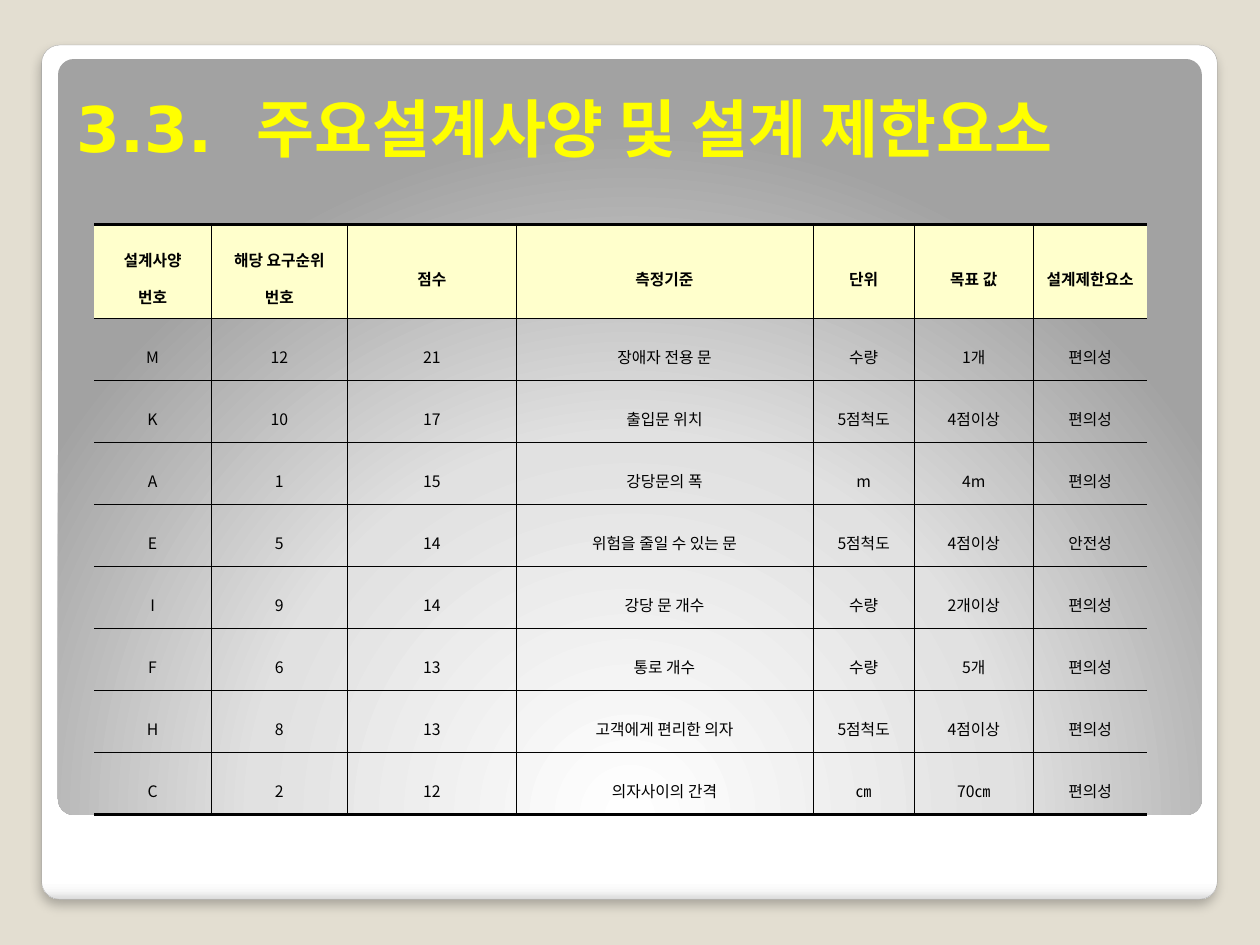
import pptx
import pptx.util
import pptx.oxml
import pptx.oxml.ns
import pptx.dml.color
import pptx.enum.shapes
import pptx.enum.text
from lxml import etree

Cm, Pt = pptx.util.Cm, pptx.util.Pt
RGBColor = pptx.dml.color.RGBColor
qn = pptx.oxml.ns.qn

BACKDROP = RGBColor(0xE3, 0xDE, 0xD1)
CARD_EDGE = RGBColor(0xA4, 0xA4, 0xA4)
YELLOW = RGBColor(0xFF, 0xFF, 0x00)
CREAM = RGBColor(0xFF, 0xFF, 0xCC)
BLACK = RGBColor(0x00, 0x00, 0x00)
WHITE = RGBColor(0xFF, 0xFF, 0xFF)
CARD_STOPS = [(0, WHITE), (98, WHITE), (99, RGBColor(0xF7, 0xF7, 0xF7)), (100, RGBColor(0xDA, 0xDA, 0xDA))]
PANEL_STOPS = [(0, WHITE), (55, RGBColor(0xE1, 0xE1, 0xE1)), (100, RGBColor(0xA2, 0xA2, 0xA2))]
TITLE_FONT = "DejaVu Sans"
TABLE_FONT = "Noto Sans CJK KR"
NO_STYLE = "{2D5ABB26-0587-4C30-8999-92F81FD0307C}"

TITLE_NUMBER, TITLE_WORDS = "3.3.", "주요설계사양 및 설계 제한요소"
HEADER = ["설계사양\n번호", "해당 요구순위 번호", "점수", "측정기준", "단위", "목표 값", "설계제한요소"]
ROWS = [
    ["M", "12", "21", "장애자 전용 문", "수량", "1개", "편의성"],
    ["K", "10", "17", "출입문 위치", "5점척도", "4점이상", "편의성"],
    ["A", "1", "15", "강당문의 폭", "m", "4m", "편의성"],
    ["E", "5", "14", "위험을 줄일 수 있는 문", "5점척도", "4점이상", "안전성"],
    ["I", "9", "14", "강당 문 개수", "수량", "2개이상", "편의성"],
    ["F", "6", "13", "통로 개수", "수량", "5개", "편의성"],
    ["H", "8", "13", "고객에게 편리한 의자", "5점척도", "4점이상", "편의성"],
    ["C", "2", "12", "의자사이의 간격", "㎝", "70㎝", "편의성"],
]
COLUMN_WIDTHS = [2.35, 2.76, 3.39, 5.99, 2.04, 2.4, 2.29]
HEADER_HEIGHT, ROW_HEIGHT = 1.9, 1.25
THIN, THICK = 0.28, 1.7


def add_node(parent, tag, **attributes):
    return etree.SubElement(parent, qn(tag), {key: str(value) for key, value in attributes.items()})


def add_colour(parent, colour):
    return add_node(parent, "a:srgbClr", val=colour)


def add_rounded(page, left, top, width, height, stops):
    shape = page.shapes.add_shape(
        pptx.enum.shapes.MSO_SHAPE.ROUNDED_RECTANGLE, Cm(left), Cm(top), Cm(width), Cm(height))
    shape.adjustments[0] = 0.021
    shape.shadow.inherit = False
    shape.line.fill.background()
    gradient = etree.Element(qn("a:gradFill"), rotWithShape="1")
    stop_list = add_node(gradient, "a:gsLst")
    for position, colour in stops:
        add_colour(add_node(stop_list, "a:gs", pos=position * 1000), colour)
    shape._element.spPr.find(qn("a:prstGeom")).addnext(gradient)
    return shape, gradient


def add_card(page):
    card, gradient = add_rounded(page, 0.84, 0.91, 23.7, 17.22, CARD_STOPS)
    add_node(gradient, "a:lin", ang=90 * 60000, scaled=0)
    card.line.color.rgb = CARD_EDGE
    card.line.width = Pt(0.16)
    effects = card._element.spPr.find(qn("a:effectLst"))
    shadow = add_node(effects, "a:outerShdw", blurRad=Pt(6), dist=Pt(4), dir=90 * 60000, rotWithShape=0)
    add_node(add_colour(shadow, BLACK), "a:alpha", val=25000)


def add_panel(page):
    _, gradient = add_rounded(page, 1.17, 1.19, 23.06, 15.24, PANEL_STOPS)
    focus = add_node(gradient, "a:path", path="circle")
    add_node(focus, "a:fillToRect", l=50000, t=175000, r=50000, b=-75000)


def add_title(page):
    box = page.shapes.add_textbox(Cm(1.3), Cm(0.53), Cm(22.73), Cm(2.92))
    frame = box.text_frame
    frame.word_wrap = True
    frame.vertical_anchor = pptx.enum.text.MSO_ANCHOR.BOTTOM
    para = frame.paragraphs[0]
    style_font(para.font, TITLE_FONT, 36, YELLOW, True)
    for words in (TITLE_NUMBER, " ", TITLE_WORDS):
        span = para.add_run()
        span.text = words
        if words == " ":
            span.font._element.set("spc", "1250")


def style_font(font, name, size, colour, bold):
    font.name = name
    font.size = Pt(size)
    font.bold = bold
    font.color.rgb = colour
    add_node(font._element, "a:ea", typeface=TABLE_FONT)


def set_borders(cell, widths):
    properties = cell._tc.get_or_add_tcPr()
    for side, width in widths.items():
        line = add_node(properties, "a:ln" + side, w=Pt(width))
        if width:
            add_colour(add_node(line, "a:solidFill"), BLACK)
        else:
            add_node(line, "a:noFill")


def add_table(page):
    lines = [HEADER] + ROWS
    last_row, last_column = len(lines) - 1, len(HEADER) - 1
    frame = page.shapes.add_table(
        len(lines), len(HEADER), Cm(1.9), Cm(4.52),
        Cm(sum(COLUMN_WIDTHS)), Cm(HEADER_HEIGHT + ROW_HEIGHT * len(ROWS)))
    table = frame.table
    table.first_row = table.horz_banding = False
    table._tbl.tblPr.find(qn("a:tableStyleId")).text = NO_STYLE
    for column, width in zip(table.columns, COLUMN_WIDTHS):
        column.width = Cm(width)
    for i, line in enumerate(lines):
        table.rows[i].height = Cm(ROW_HEIGHT if i else HEADER_HEIGHT)
        for j, words in enumerate(line):
            cell = table.cell(i, j)
            cell.text = words
            cell.vertical_anchor = pptx.enum.text.MSO_ANCHOR.MIDDLE
            cell.margin_left = cell.margin_right = Cm(0.23)
            cell.margin_top = cell.margin_bottom = Cm(0.11)
            set_borders(cell, {
                "L": THIN if j else 0,
                "R": THIN if j < last_column else 0,
                "T": THIN if i else THICK,
                "B": THIN if i < last_row else THICK,
            })
            if i:
                cell.fill.background()
            else:
                cell.fill.solid()
                cell.fill.fore_color.rgb = CREAM
            for para in cell.text_frame.paragraphs:
                para.alignment = pptx.enum.text.PP_ALIGN.CENTER
                para.line_spacing = 1.6
                style_font(para.font, TABLE_FONT, 9, BLACK, i == 0)


def main():
    deck = pptx.Presentation()
    deck.slide_width, deck.slide_height = Cm(25.4), Cm(19.05)
    page = deck.slides.add_slide(deck.slide_layouts[6])
    page.background.fill.solid()
    page.background.fill.fore_color.rgb = BACKDROP
    add_card(page)
    add_panel(page)
    add_title(page)
    add_table(page)
    deck.save("out.pptx")


if __name__ == "__main__":
    main()
